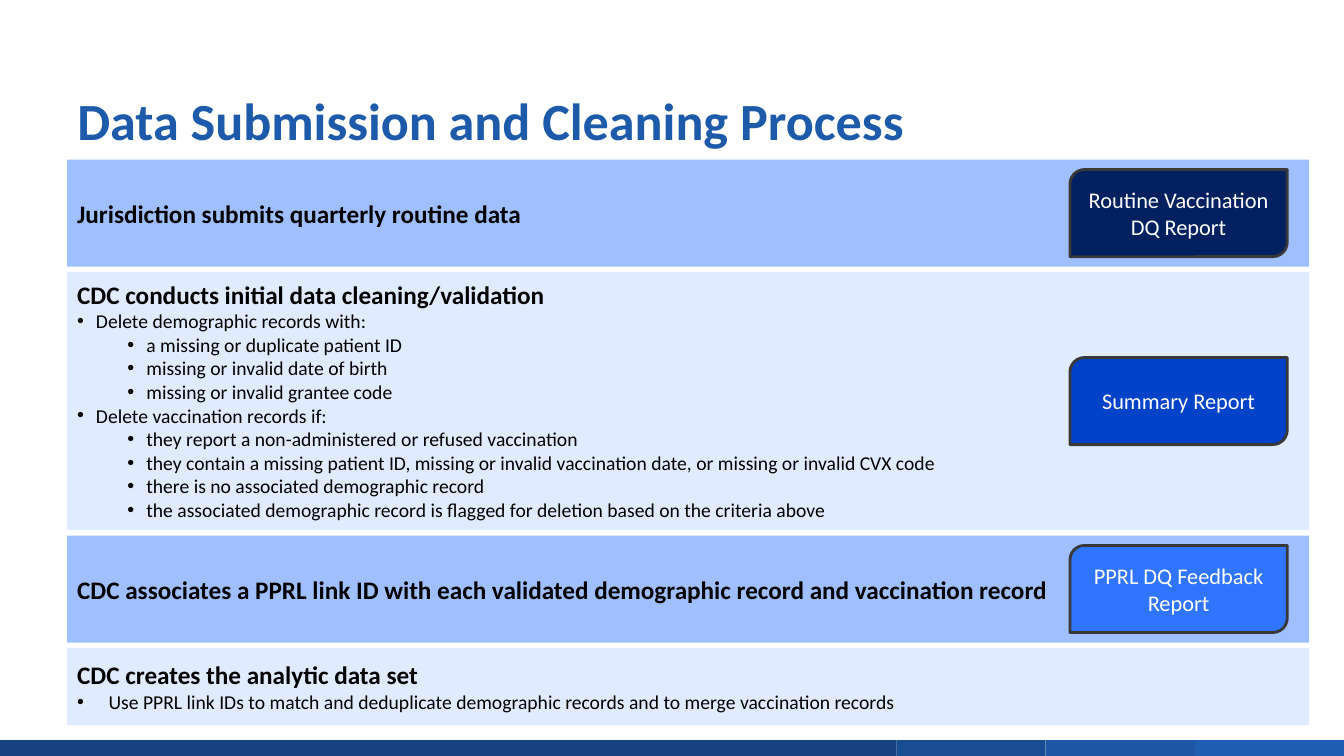
from lxml.etree import SubElement
from pptx import Presentation
from pptx.dml.color import RGBColor
from pptx.enum.shapes import MSO_SHAPE
from pptx.enum.text import MSO_ANCHOR, MSO_AUTO_SIZE, PP_ALIGN
from pptx.oxml.ns import qn
from pptx.util import Pt

PX = 9525
SLIDE_WIDTH, SLIDE_HEIGHT = 1280, 720
FONT = "Calibri"

BLACK = RGBColor(0x00, 0x00, 0x00)
WHITE = RGBColor(0xFF, 0xFF, 0xFF)
TITLE_BLUE = RGBColor(0x1E, 0x5A, 0xAA)
BAND_BLUE = RGBColor(0x9F, 0xBF, 0xFF)
BAND_PALE = RGBColor(0xE1, 0xEB, 0xFF)
OUTLINE = RGBColor(0x38, 0x38, 0x38)
NAVY = RGBColor(0x00, 0x20, 0x60)
ROYAL = RGBColor(0x00, 0x42, 0xC8)
AZURE = RGBColor(0x30, 0x75, 0xFF)
FOOTER_FIRST = RGBColor(0x16, 0x43, 0x80)
FOOTER_REST = [
    RGBColor(0x19, 0x4D, 0x93),
    RGBColor(0x1C, 0x56, 0xA4),
    RGBColor(0x1E, 0x5D, 0xB2),
]

TITLE = "Data Submission and Cleaning Process"
STEPS = [
    {
        "heading": "Jurisdiction submits quarterly routine data",
        "bullets": [],
        "band": (102, BAND_BLUE),
        "text_size": (446, 38),
        "report": ("Routine Vaccination DQ Report", NAVY),
    },
    {
        "heading": "CDC conducts initial data cleaning/validation",
        "bullets": [
            (0, "Delete demographic records with:"),
            (1, "a missing or duplicate patient ID"),
            (1, "missing or invalid date of birth"),
            (1, "missing or invalid grantee code"),
            (0, "Delete vaccination records if:"),
            (1, "they report a non-administered or refused vaccination"),
            (1, "they contain a missing patient ID, missing or invalid vaccination date, "
                "or missing or invalid CVX code"),
            (1, "there is no associated demographic record"),
            (1, "the associated demographic record is flagged for deletion "
                "based on the criteria above"),
        ],
        "hanging": 18,
        "band": (246, BAND_PALE),
        "text_size": (850, 242),
        "report": ("Summary Report", ROYAL),
    },
    {
        "heading": "CDC associates a PPRL link ID with each validated demographic record "
                   "and vaccination record",
        "bullets": [],
        "band": (102, BAND_BLUE),
        "text_size": (951, 38),
        "report": ("PPRL DQ Feedback Report", AZURE),
    },
    {
        "heading": "CDC creates the analytic data set",
        "bullets": [
            (0, "Use PPRL link IDs to match and deduplicate demographic records "
                "and to merge vaccination records"),
        ],
        "hanging": 30,
        "band": (74, BAND_PALE),
        "text_size": (813, 61),
        "report": None,
    },
]

BAND_LEFT, BAND_TOP, BAND_WIDTH, BAND_GAP = 64, 152, 1183, 5
REPORT_LEFT, REPORT_WIDTH, REPORT_HEIGHT = 1019, 207, 83
LEVEL_INDENT = 48
FOOTER_TOP, FOOTER_SEGMENT = 705, 142


def box(*lengths):
    return [round(length * PX) for length in lengths]


def write(paragraph, text, size=14, bold=False, color=BLACK, align=PP_ALIGN.LEFT,
          level=0, hanging=0):
    paragraph.alignment = align
    paragraph.level = level
    if hanging:
        properties = paragraph._p.get_or_add_pPr()
        properties.set("marL", str((hanging + level * LEVEL_INDENT) * PX))
        properties.set("indent", str(-hanging * PX))
        SubElement(properties, qn("a:buFont"), typeface="Arial")
        SubElement(properties, qn("a:buChar"), char="•")
    run = paragraph.add_run()
    run.text = text
    font = run.font
    font.name, font.size, font.bold = FONT, Pt(size), bold
    font.color.rgb = color


def add_block(slide, kind, bounds, fill, outline=None):
    shape = slide.shapes.add_shape(kind, *box(*bounds))
    shape.shadow.inherit = False
    shape.fill.solid()
    shape.fill.fore_color.rgb = fill
    if outline is None:
        shape.line.fill.background()
    else:
        shape.line.color.rgb = outline
        shape.line.width = Pt(2)
    return shape


def add_footer(slide):
    first_width = SLIDE_WIDTH - len(FOOTER_REST) * FOOTER_SEGMENT
    left = 0
    for index, color in enumerate([FOOTER_FIRST, *FOOTER_REST]):
        width = FOOTER_SEGMENT if index else first_width
        bounds = (left, FOOTER_TOP, width, SLIDE_HEIGHT - FOOTER_TOP)
        add_block(slide, MSO_SHAPE.RECTANGLE, bounds, color)
        left += width


def add_title(slide):
    title = slide.shapes.title
    title.left, title.top, title.width, title.height = box(64, 29, 1152, 120)
    frame = title.text_frame
    frame.auto_size = MSO_AUTO_SIZE.NONE
    frame.vertical_anchor = MSO_ANCHOR.BOTTOM
    paragraph = frame.paragraphs[0]
    paragraph.line_spacing = Pt(40)
    write(paragraph, TITLE, size=37.3, bold=True, color=TITLE_BLUE)


def add_step(slide, step, top):
    height, color = step["band"]
    middle = top + height / 2
    add_block(slide, MSO_SHAPE.RECTANGLE, (BAND_LEFT, top, BAND_WIDTH, height), color)

    text_width, text_height = step["text_size"]
    text_box = slide.shapes.add_textbox(
        *box(BAND_LEFT, middle - text_height / 2, text_width, text_height))
    frame = text_box.text_frame
    frame.word_wrap = False
    frame.auto_size = MSO_AUTO_SIZE.SHAPE_TO_FIT_TEXT
    write(frame.paragraphs[0], step["heading"], size=18, bold=True)
    for level, text in step["bullets"]:
        write(frame.add_paragraph(), text, level=level, hanging=step["hanging"])

    if step["report"]:
        label, fill = step["report"]
        bounds = (REPORT_LEFT, middle - REPORT_HEIGHT / 2, REPORT_WIDTH, REPORT_HEIGHT)
        report = add_block(slide, MSO_SHAPE.ROUND_2_DIAG_RECTANGLE, bounds, fill, OUTLINE)
        report.text_frame.word_wrap = True
        report.text_frame.vertical_anchor = MSO_ANCHOR.MIDDLE
        write(report.text_frame.paragraphs[0], label, size=16, color=WHITE,
              align=PP_ALIGN.CENTER)


def main():
    """Build the data submission and cleaning process slide."""
    presentation = Presentation()
    presentation.slide_width, presentation.slide_height = box(SLIDE_WIDTH, SLIDE_HEIGHT)
    slide = presentation.slides.add_slide(presentation.slide_layouts[5])
    add_footer(slide)
    add_title(slide)
    top = BAND_TOP
    for step in STEPS:
        add_step(slide, step, top)
        top += step["band"][0] + BAND_GAP
    presentation.save("out.pptx")


if __name__ == "__main__":
    main()
